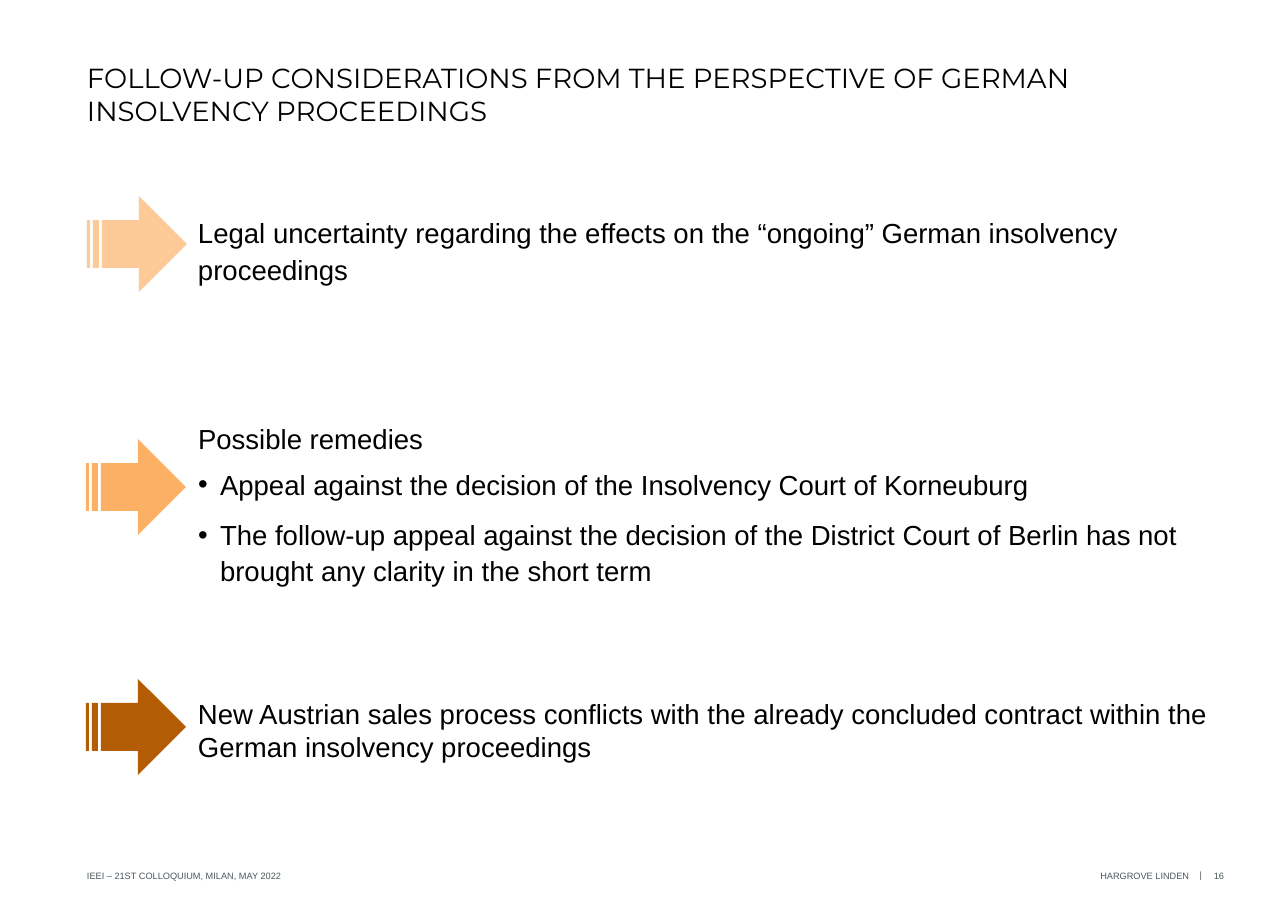
from pptx import Presentation
from pptx import util as u
from pptx.dml.color import RGBColor
from pptx.enum import shapes, text
from pptx.oxml.ns import qn
from lxml import etree

PX = 914400 / 110.2
SLIDE = (1288, 911)
BLACK, GREY = "000000", "4E575C"
BODY = {"name": "Arial", "size": u.Pt(18)}
SMALL = {"name": "Arial", "size": u.Pt(6)}
HEADING = {"name": "Montserrat", "size": u.Pt(18)}
PLAIN = {}
LEAD = {"line_spacing": 1.1, "space_after": u.Pt(6)}
BULLET = {"line_spacing": 1.1, "space_after": u.Pt(9)}
RIGHT = {"alignment": text.PP_ALIGN.RIGHT}
TOP, MIDDLE = text.MSO_ANCHOR.TOP, text.MSO_ANCHOR.MIDDLE
BULLET_INDENT = 22

# box, insets (left, top, right, bottom), anchor, font, colour, paragraphs
TEXTS = [
    ((87, 61, 1137, 32), (0, 0, 0, 0), TOP, HEADING, BLACK, [
        ("FOLLOW-UP CONSIDERATIONS FROM THE PERSPECTIVE OF GERMAN "
         "INSOLVENCY PROCEEDINGS", PLAIN)]),
    ((198, 213, 1028, 69), (0, 0, 0, 0), TOP, BODY, BLACK, [
        ("Legal uncertainty regarding the effects on the “ongoing” German "
         "insolvency proceedings", LEAD)]),
    ((198, 419, 1027, 219), (0, 0, 0, 0), TOP, BODY, BLACK, [
        ("Possible remedies", LEAD),
        ("Appeal against the decision of the Insolvency Court of Korneuburg", BULLET),
        ("The follow-up appeal against the decision of the District Court of "
         "Berlin has not brought any clarity in the short term", BULLET)]),
    ((198, 691, 1028, 78), (0, 6, 11, 6), TOP, BODY, BLACK, [
        ("New Austrian sales process conflicts with the already concluded "
         "contract within the German insolvency proceedings", PLAIN)]),
    ((87, 865, 748, 22), (0, 7, 12, 7), MIDDLE, SMALL, GREY, [
        ("IEEI – 21ST COLLOQUIUM, MILAN, MAY 2022", PLAIN)]),
    ((912, 856, 289, 39), (12, 7, 12, 7), MIDDLE, SMALL, GREY, [
        ("HARGROVE LINDEN", RIGHT)]),
    ((1180, 864, 22, 22), (0, 0, 0, 0), MIDDLE, SMALL, GREY, [("|", RIGHT)]),
    ((1168, 865, 56, 22), (0, 0, 0, 0), MIDDLE, SMALL, GREY, [("16", RIGHT)]),
]
ARROW_SIZE = (100, 96)
ARROWS = [(87, 196, "FDCA97"), (86, 439, "FCB063"), (86, 679, "B35C04")]


def px(*lengths):
    return [u.Emu(round(n * PX)) for n in lengths]


def rgb(value):
    return RGBColor.from_string(value)


def set_all(target, values):
    for name, value in values.items():
        setattr(target, name, value)


def add_bullet(p):
    pPr = p._p.get_or_add_pPr()
    indent, = px(BULLET_INDENT)
    pPr.set("marL", str(indent))
    pPr.set("indent", str(-indent))
    etree.SubElement(pPr, qn("a:buFont")).set("typeface", "Arial")
    etree.SubElement(pPr, qn("a:buChar")).set("char", "•")


def add_text(slide, box, insets, anchor, font, colour, paragraphs):
    tf = slide.shapes.add_textbox(*px(*box)).text_frame
    sides = ("margin_left", "margin_top", "margin_right", "margin_bottom")
    set_all(tf, dict(zip(sides, px(*insets)), word_wrap=True, vertical_anchor=anchor))
    for i, (words, layout) in enumerate(paragraphs):
        p = tf.add_paragraph() if i else tf.paragraphs[0]
        set_all(p, layout)
        if layout is BULLET:
            add_bullet(p)
        r = p.add_run()
        r.text = words
        set_all(r.font, font)
        r.font.color.rgb = rgb(colour)


def add_arrow(slide, left, top, colour):
    sp = slide.shapes.add_shape(shapes.MSO_SHAPE.STRIPED_RIGHT_ARROW,
                                *px(left, top, *ARROW_SIZE))
    sp.shadow.inherit = False
    sp.fill.solid()
    sp.fill.fore_color.rgb = rgb(colour)
    sp.line.fill.background()


def main():
    prs = Presentation()
    prs.slide_width, prs.slide_height = px(*SLIDE)
    slide = prs.slides.add_slide(prs.slide_layouts[6])
    for item in TEXTS:
        add_text(slide, *item)
    for arrow in ARROWS:
        add_arrow(slide, *arrow)
    prs.save("out.pptx")


if __name__ == "__main__":
    main()
